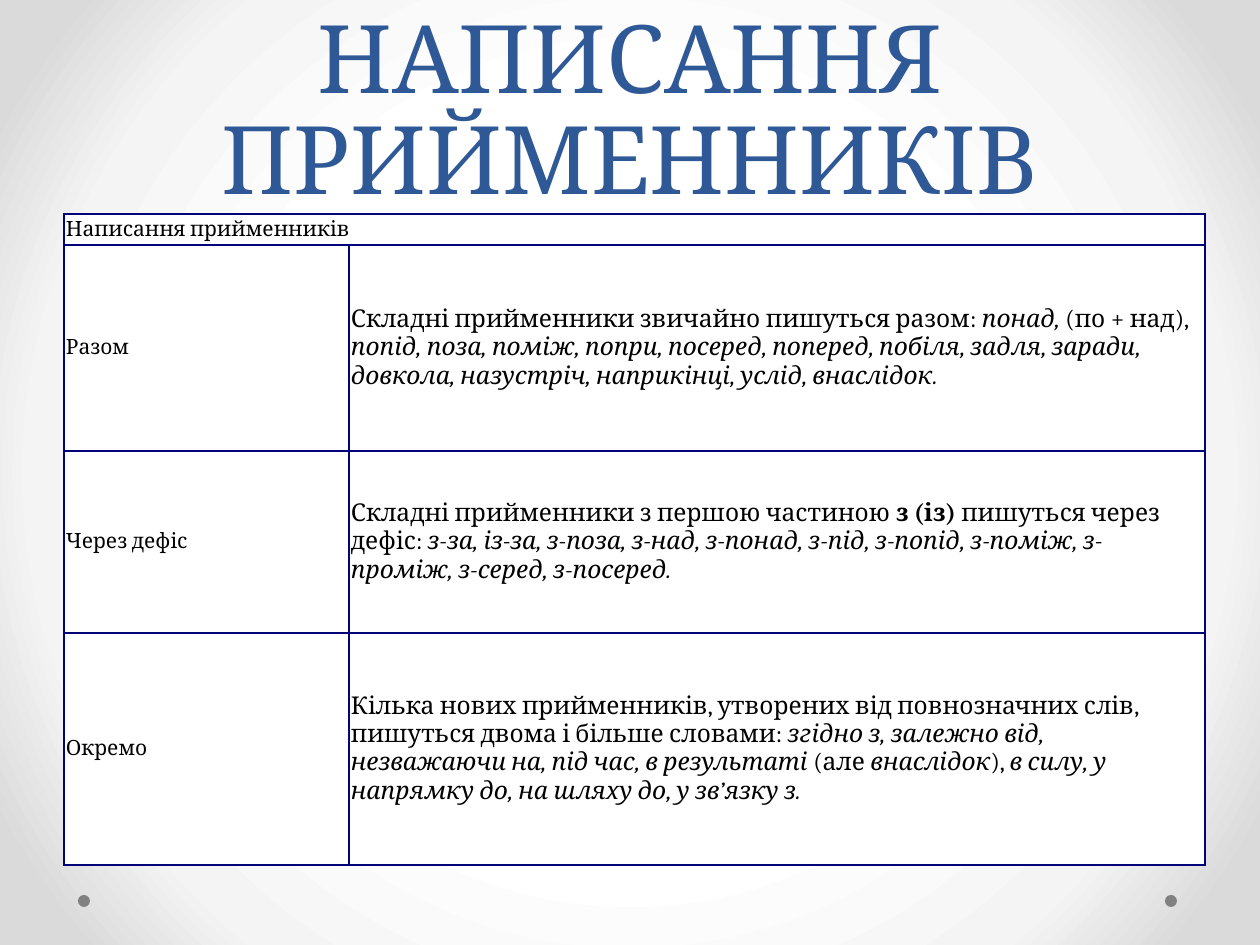
"""Build a slide with a table of spelling rules for Ukrainian prepositions."""
import lxml.etree
import pptx
import pptx.dml.color
import pptx.enum.shapes
import pptx.enum.text
import pptx.oxml
import pptx.oxml.ns
import pptx.util

RGBColor = pptx.dml.color.RGBColor
BLUE = RGBColor(0x2F, 0x58, 0x97)
NAVY = RGBColor(0x03, 0x03, 0x79)
GREY = RGBColor(0x80, 0x80, 0x80)
BLACK = RGBColor(0, 0, 0)
WHITE = RGBColor(0xFF, 0xFF, 0xFF)
PALE = RGBColor(0xF4, 0xF4, 0xF4)
SILVER = RGBColor(0xDA, 0xDA, 0xDA)

FONT = "Cambria"
TITLE = "НАПИСАННЯ ПРИЙМЕННИКІВ"
HEADING = "Написання прийменників"
RULES = [
    ("Разом", [
        ("Складні прийменники звичайно пишуться разом: ", ""),
        ("понад,", "i"),
        (" (по + над), ", ""),
        ("попід, поза, поміж, попри, посеред, поперед, побіля, задля, заради, "
         "довкола, назустріч, наприкінці, услід, внаслідок.", "i"),
    ]),
    ("Через дефіс", [
        ("Складні прийменники з першою частиною ", ""),
        ("з (із) ", "b"),
        ("пишуться через дефіс: ", ""),
        ("з-за, із-за, з-поза, з-над, з-понад, з-під, з-попід, з-поміж, "
         "з-проміж, з-серед, з-посеред.", "i"),
    ]),
    ("Окремо", [
        ("Кілька нових прийменників, утворених від повнозначних слів, "
         "пишуться двома і більше словами: ", ""),
        ("згідно з, залежно від, незважаючи на, під час, в результаті", "i"),
        (" (але ", ""),
        ("внаслідок", "i"),
        ("), ", ""),
        ("в силу, у напрямку до, на шляху до, у зв’язку з.", "i"),
    ]),
]

WIDTH, HEIGHT = 1260, 945
TITLE_BOX = (63, 0, 1134, 220)
TABLE_LEFT, TABLE_TOP = 64, 214
COLUMNS = [285, 856]
ROWS = [31, 206, 182, 232]
CELL_MARGIN = 2
DOTS = [78, 1165]
DOT_TOP, DOT_SIZE = 895, 12
BACKDROP = [(50, WHITE), (76, PALE), (92, SILVER)]


def px(n):
    return round(n * 914400 / 126)


def write(tf, text, size, color=BLACK, align=None, spacing=None):
    """Write a string or a list of (text, style) runs into the first paragraph."""
    p = tf.paragraphs[0]
    p.alignment = align
    if spacing:
        p.line_spacing = pptx.util.Pt(spacing)
    for words, style in [(text, "")] if isinstance(text, str) else text:
        r = p.add_run()
        r.text = words
        r.font.name = FONT
        r.font.size = pptx.util.Pt(size)
        r.font.color.rgb = color
        r.font.bold = style == "b"
        r.font.italic = style == "i"


def set_background(s):
    stops = "".join(
        f'<a:gs pos="{pos * 1000}"><a:srgbClr val="{color}"/></a:gs>'
        for pos, color in BACKDROP)
    s.background.fill.solid()
    solid = s.background._cSld.find(".//" + pptx.oxml.ns.qn("a:solidFill"))
    grad = pptx.oxml.parse_xml(
        f'<a:gradFill {pptx.oxml.ns.nsdecls("a")} rotWithShape="1">'
        f'<a:gsLst>{stops}</a:gsLst><a:path path="circle">'
        '<a:fillToRect l="50000" t="50000" r="50000" b="50000"/>'
        '</a:path></a:gradFill>')
    solid.getparent().replace(solid, grad)


def style_cell(cell):
    cell.margin_left = cell.margin_right = px(CELL_MARGIN)
    cell.margin_top = cell.margin_bottom = px(CELL_MARGIN)
    cell.vertical_anchor = pptx.enum.text.MSO_ANCHOR.MIDDLE
    cell.fill.solid()
    cell.fill.fore_color.rgb = WHITE
    tc_pr = cell._tc.get_or_add_tcPr()
    for i, side in enumerate(("lnL", "lnR", "lnT", "lnB")):
        tc_pr.insert(i, pptx.oxml.parse_xml(
            f'<a:{side} {pptx.oxml.ns.nsdecls("a")} w="{pptx.util.Pt(1.2)}">'
            f'<a:solidFill><a:srgbClr val="{NAVY}"/></a:solidFill></a:{side}>'))


def add_dot(s, left):
    sp = s.shapes.add_shape(pptx.enum.shapes.MSO_SHAPE.OVAL,
                            px(left), px(DOT_TOP), px(DOT_SIZE), px(DOT_SIZE))
    sp.shadow.inherit = False
    sp.fill.solid()
    sp.fill.fore_color.rgb = GREY
    sp.line.fill.background()


def add_title(s):
    tf = s.shapes.add_textbox(*map(px, TITLE_BOX)).text_frame
    tf.word_wrap = True
    tf.vertical_anchor = pptx.enum.text.MSO_ANCHOR.BOTTOM
    write(tf, TITLE, 54, color=BLUE,
          align=pptx.enum.text.PP_ALIGN.CENTER, spacing=58)


def add_rules(s):
    table = s.shapes.add_table(
        len(ROWS), len(COLUMNS), px(TABLE_LEFT), px(TABLE_TOP),
        px(sum(COLUMNS)), px(sum(ROWS))).table
    table.first_row = table.horz_banding = False
    for column, width in zip(table.columns, COLUMNS):
        column.width = px(width)
    for row, height in zip(table.rows, ROWS):
        row.height = px(height)
    for cell in table.iter_cells():
        style_cell(cell)
    table.cell(0, 0).merge(table.cell(0, 1))
    write(table.cell(0, 0).text_frame, HEADING, 12)
    for i, (name, rule) in enumerate(RULES, 1):
        write(table.cell(i, 0).text_frame, name, 12)
        write(table.cell(i, 1).text_frame, rule, 14)


def main():
    prs = pptx.Presentation()
    prs.slide_width, prs.slide_height = px(WIDTH), px(HEIGHT)
    s = prs.slides.add_slide(prs.slide_layouts[6])
    set_background(s)
    for left in DOTS:
        add_dot(s, left)
    add_title(s)
    add_rules(s)
    prs.save("out.pptx")


if __name__ == "__main__":
    main()
